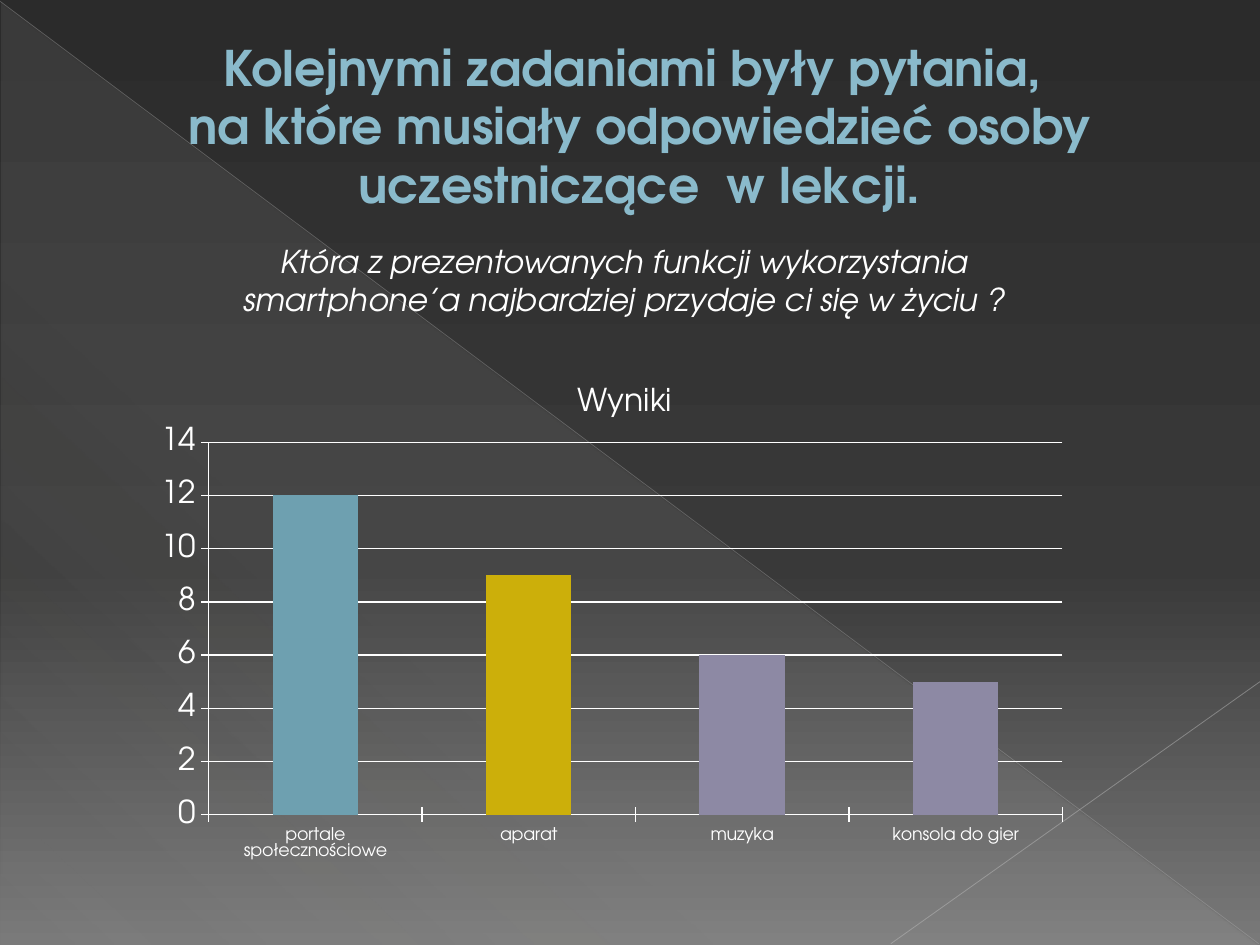
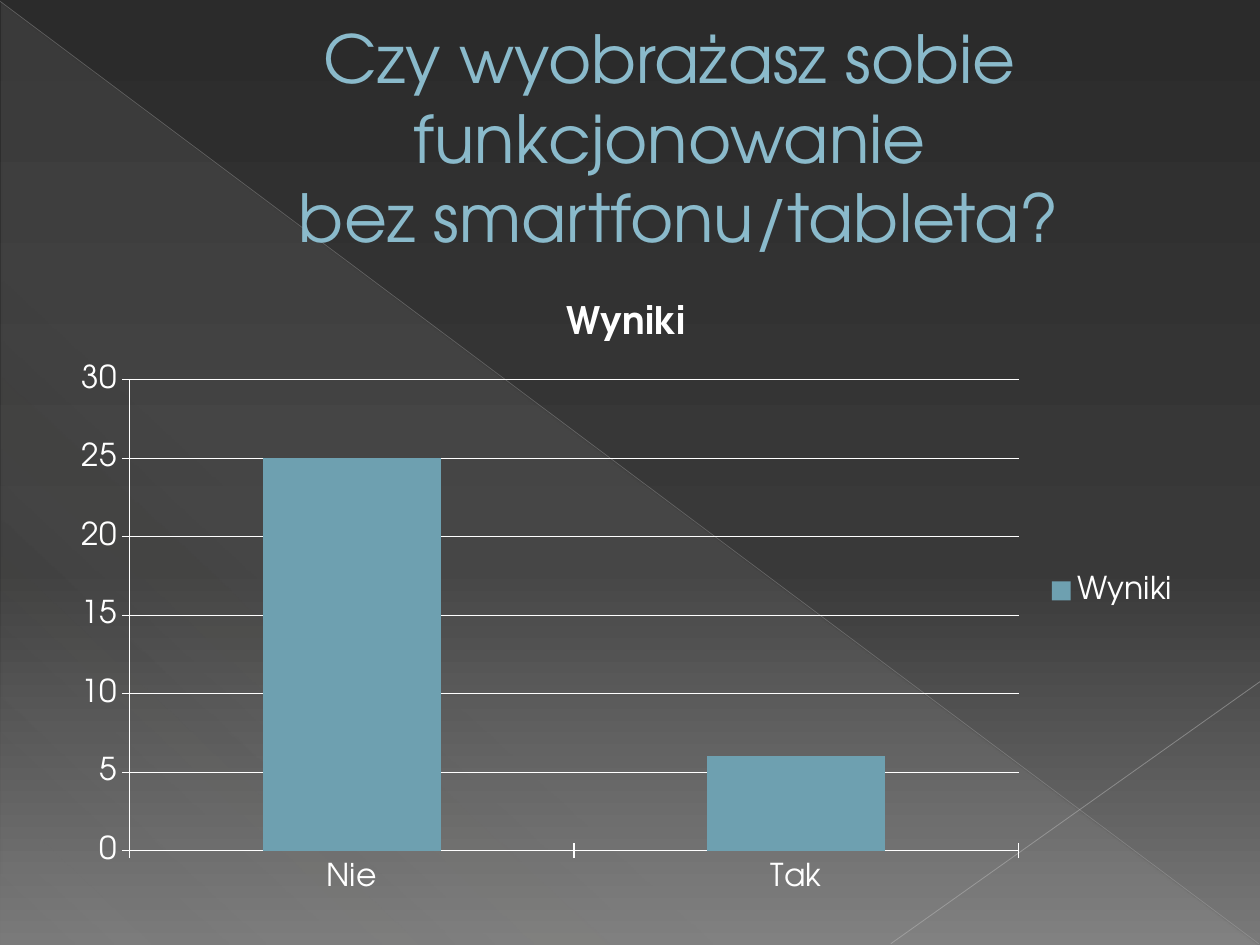
from lxml.etree import SubElement
from pptx import Presentation
from pptx.chart.data import CategoryChartData
from pptx.dml.color import RGBColor
from pptx.enum.chart import XL_CHART_TYPE as CT, XL_LEGEND_POSITION as LEGEND, XL_TICK_MARK as TICK
from pptx.enum.shapes import MSO_CONNECTOR, MSO_SHAPE
from pptx.enum.text import MSO_ANCHOR, MSO_AUTO_SIZE as FIT, PP_ALIGN
from pptx.oxml import parse_xml
from pptx.oxml.ns import nsdecls, qn
from pptx.util import Inches, Pt

FONT = "TeX Gyre Adventor"
WHITE, SKY, SKY_EDGE = "FFFFFF", "8ABACB", "4C6F7A"
TEAL, GOLD, VIOLET = "6EA0B0", "CCAF0A", "8D89A4"
BACKDROP = [(0, "2B2B2B", 100), (60, "393939", 100), (100, "797979", 100)]
SHEEN = [(0, "D4D2D0", 10), (70, "D4D2D0", 8), (100, "D4D2D0", 1)]


def rgb(color):
    return RGBColor.from_string(color)


def set_gradient(element, stops, angle):
    """Replace the solid fill inside element by a linear gradient."""
    gs = "".join(
        f'<a:gs pos="{pos * 1000}"><a:srgbClr val="{color}">'
        f'<a:alpha val="{alpha * 1000}"/></a:srgbClr></a:gs>'
        for pos, color, alpha in stops)
    grad = parse_xml(f'<a:gradFill {nsdecls("a")}><a:gsLst>{gs}</a:gsLst>'
                     f'<a:lin ang="{angle * 60000}" scaled="0"/></a:gradFill>')
    solid = element.find(qn("a:solidFill"))
    solid.getparent().replace(solid, grad)


class Deck:
    def __init__(self):
        self.prs = Presentation()
        self.prs.slide_width, self.prs.slide_height = Inches(10), Inches(7.5)
        master = self.prs.slide_master
        master.background.fill.solid()
        set_gradient(master.element.find(".//" + qn("p:bgPr")), BACKDROP, 90)
        self.s = None

    def new_slide(self):
        self.s = self.prs.slides.add_slide(self.prs.slide_layouts[5])
        self.sheen()
        self.line((0, 0.01), (9.99, 7.49), "B7B7B7", 0.39, 35)
        self.line((10, 5.41), (7.07, 7.49), "BFBFBF", 0.47, 45)

    def behind_title(self, sp):
        self.s.shapes.title.element.addprevious(sp.element)

    def sheen(self):
        sp = self.s.shapes.add_shape(MSO_SHAPE.RIGHT_TRIANGLE, Inches(0.01), Inches(0.02),
                                     Inches(9.98), Inches(7.48))
        sp.shadow.inherit = False
        sp.line.fill.background()
        sp.fill.solid()
        set_gradient(sp.element.spPr, SHEEN, 133)
        self.behind_title(sp)

    def line(self, start, end, color, width, alpha):
        sp = self.s.shapes.add_connector(MSO_CONNECTOR.STRAIGHT,
                                         *(Inches(v) for v in start + end))
        sp.line.color.rgb = rgb(color)
        sp.line.width = Pt(width)
        spPr = sp.element.spPr
        SubElement(spPr.find(".//" + qn("a:srgbClr")), qn("a:alpha"), val=str(alpha * 1000))
        SubElement(spPr, qn("a:effectLst"))
        self.behind_title(sp)

    def style(self, font, size, color=WHITE, bold=False, italic=False):
        font.name, font.size = FONT, Pt(size)
        font.bold, font.italic = bold, italic
        font.color.rgb = rgb(color)

    def title(self, lines, left, top, size, bold=False):
        sp = self.s.shapes.title
        sp.left, sp.top = Inches(left), Inches(top)
        sp.width, sp.height = Inches(9), Inches(1.53)
        tf = sp.text_frame
        tf.auto_size, tf.word_wrap = FIT.NONE, True
        tf.vertical_anchor = MSO_ANCHOR.MIDDLE
        p = tf.paragraphs[0]
        p.alignment = PP_ALIGN.CENTER
        pPr = p._p.get_or_add_pPr()
        pPr.set("marL", str(Inches(0.53)))
        pPr.set("indent", "0")
        for i, text in enumerate(lines):
            if i:
                p.add_line_break()
            r = p.add_run()
            r.text = text
            self.style(r.font, size, SKY, bold)
            # Thin darker outline around the letters
            r._r.get_or_add_rPr().insert(0, parse_xml(
                f'<a:ln {nsdecls("a")} w="{Pt(0.5)}"><a:solidFill>'
                f'<a:srgbClr val="{SKY_EDGE}"/></a:solidFill></a:ln>'))

    def text(self, text, left, top, width, height, italic=False):
        sp = self.s.shapes.add_textbox(Inches(left), Inches(top), Inches(width), Inches(height))
        tf = sp.text_frame
        tf.word_wrap, tf.auto_size = True, FIT.SHAPE_TO_FIT_TEXT
        p = tf.paragraphs[0]
        p.alignment = PP_ALIGN.CENTER
        r = p.add_run()
        r.text = text
        self.style(r.font, 18, italic=italic)

    def chart(self, kind, box, cats, series, top_value, step, cat_size=18):
        """Draw a column chart; series holds (name, values, color)."""
        data = CategoryChartData()
        data.categories = cats
        for name, values, _ in series:
            data.add_series(name, values)
        chart = self.s.shapes.add_chart(kind, *(Inches(v) for v in box), data).chart
        self.style(chart.font, 18)
        chart.has_title = chart.has_legend = False
        plot = chart.plots[0]
        plot.vary_by_categories = False
        plot.gap_width = 150
        plot.overlap = 100 if kind == CT.COLUMN_STACKED else 0
        for ser, (_, _, color) in zip(plot.series, series):
            ser.format.fill.solid()
            ser.format.fill.fore_color.rgb = rgb(color)
            ser.invert_if_negative = False
        # Axes
        cat, val = chart.category_axis, chart.value_axis
        val.minimum_scale, val.maximum_scale, val.major_unit = 0, top_value, step
        val.has_major_gridlines, cat.has_major_gridlines = True, False
        for axis, size in ((cat, cat_size), (val, 18)):
            axis.major_tick_mark, axis.minor_tick_mark = TICK.CROSS, TICK.NONE
            self.style(axis.tick_labels.font, size)
        for part in (cat, val, val.major_gridlines):
            part.format.line.color.rgb = rgb(WHITE)
            part.format.line.width = Pt(0.75)
        return chart

    def chart_title(self, chart, text):
        chart.has_title = True
        chart.chart_title.include_in_layout = False
        r = chart.chart_title.text_frame.paragraphs[0].add_run()
        r.text = text
        self.style(r.font, 21.6, bold=True)

    def legend(self, chart):
        chart.has_legend = True
        chart.legend.position = LEGEND.RIGHT
        chart.legend.include_in_layout = False
        self.style(chart.legend.font, 18)

    def plot_layout(self, chart, x, y, w, h):
        area = chart.element.find(".//" + qn("c:plotArea"))
        for old in area.findall(qn("c:layout")):
            area.remove(old)
        parts = [("layoutTarget", "inner"), ("xMode", "edge"), ("yMode", "edge"),
                 ("x", x), ("y", y), ("w", w), ("h", h)]
        inner = "".join(f'<c:{tag} val="{value}"/>' for tag, value in parts)
        area.insert(0, parse_xml(f'<c:layout {nsdecls("c")}><c:manualLayout>{inner}'
                                 f'</c:manualLayout></c:layout>'))


def main():
    deck = Deck()

    # Slide 1: most useful function
    deck.new_slide()
    deck.title(["Kolejnymi zadaniami były pytania, ",
                "na które musiały odpowiedzieć osoby uczestniczące  w lekcji."],
               0.31, 0.23, 28, bold=True)
    chart = deck.chart(CT.COLUMN_STACKED, (0.78, 2.89, 7.97, 4.77),
                       ["portale społecznościowe", "aparat", "muzyka", "konsola do gier"],
                       [("Series 1", (12, 0, 0, 0), TEAL),
                        ("Series 2", (0, 9, 0, 0), GOLD),
                        ("Series 3", (0, 0, 6, 5), VIOLET)], 14, 2, cat_size=10)
    deck.plot_layout(chart, 0.11, 0.13, 0.85, 0.62)
    deck.text("Która z prezentowanych funkcji wykorzystania smartphone’a najbardziej "
              "przydaje ci się w życiu ?", 1.48, 1.87, 6.95, 1.01, italic=True)
    deck.text("Wyniki", 4.06, 2.97, 1.8, 0.4)

    # Slide 2: life without a smartphone
    deck.new_slide()
    deck.title(["Czy wyobrażasz sobie funkcjonowanie", " bez smartfonu/tableta?"],
               0.55, 0.32, 37.8)
    chart = deck.chart(CT.COLUMN_CLUSTERED, (0.47, 2.19, 9, 5), ["Nie", "Tak"],
                       [("Wyniki", (25, 6), TEAL)], 30, 5)
    deck.chart_title(chart, "Wyniki")
    deck.legend(chart)

    deck.prs.save("out.pptx")


if __name__ == "__main__":
    main()
